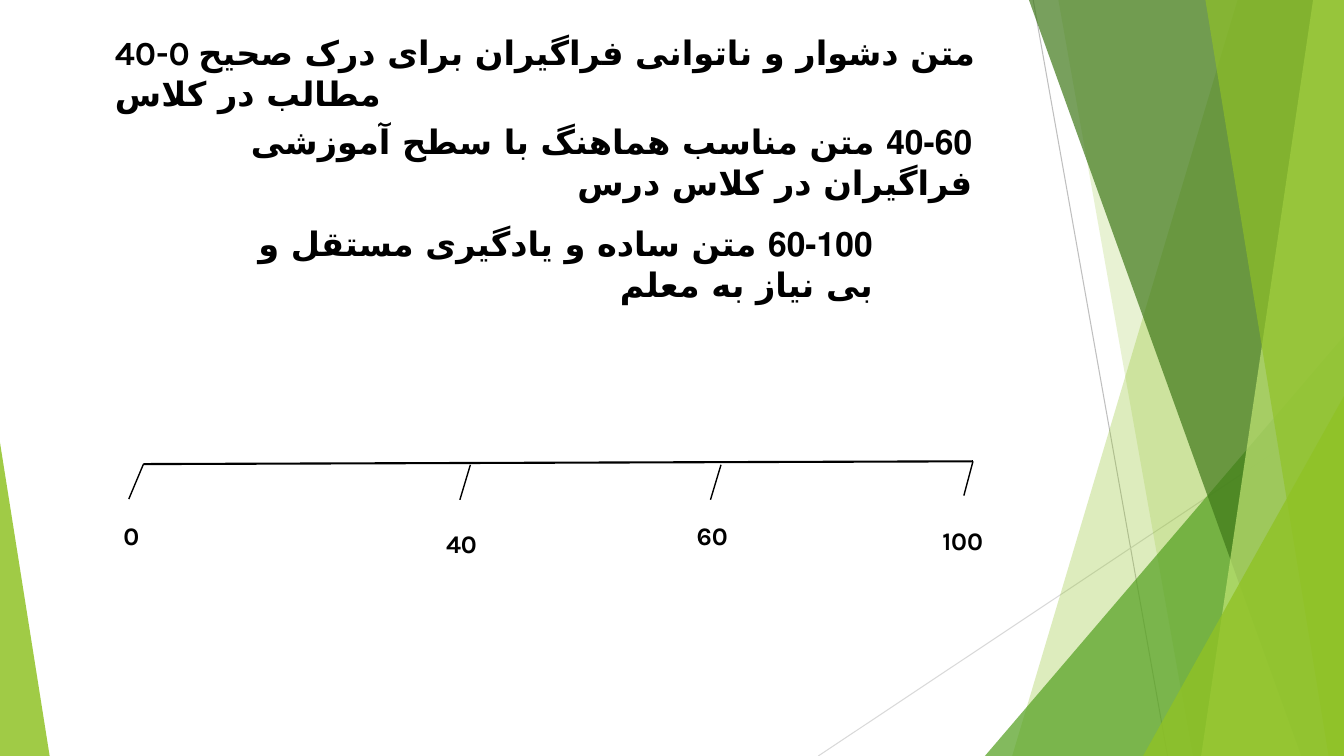
from lxml import etree
from pptx import Presentation
from pptx.dml.color import RGBColor
from pptx.enum.shapes import MSO_CONNECTOR, MSO_SHAPE
from pptx.enum.text import PP_ALIGN
from pptx.oxml.ns import qn
from pptx.util import Pt

STRAIGHT = MSO_CONNECTOR.STRAIGHT
TRIANGLE = MSO_SHAPE.ISOSCELES_TRIANGLE
LEFT, RIGHT = PP_ALIGN.LEFT, PP_ALIGN.RIGHT

BLACK = RGBColor(0x00, 0x00, 0x00)
GREY = RGBColor(0xBF, 0xBF, 0xBF)
PALE_GREY = RGBColor(0xD9, 0xD9, 0xD9)
LIME = RGBColor(0x90, 0xC2, 0x26)
PALE_LIME = RGBColor(0xC0, 0xE4, 0x74)
GREEN = RGBColor(0x54, 0xA0, 0x21)
DARK_GREEN = RGBColor(0x3F, 0x78, 0x19)

WIDTH, HEIGHT = 960, 540
FONT = "Karla"
NUMBER_FONT = "Helvetica"
PERSIAN_FONT = "DejaVu Sans"

# Left, top, width, height, right-to-left, score range, meaning
STATEMENTS = [
    (75, 19.5, 636, 36, False, "40-0",
     " متن دشوار و ناتوانی فراگیران برای درک صحیح مطالب در کلاس"),
    (83.5, 83, 618, 36, True, "40-60",
     " متن مناسب هماهنگ با سطح آموزشی فراگیران در کلاس درس"),
    (165.5, 156, 465, 36, True, "60-100",
     " متن ساده و یادگیری مستقل و بی نیاز به معلم"),
]

# Score, tick x and y, tick lean and drop, label x, y and width; from the axis start
SCORES = [
    ("0", 0, 0, -10.5, 25, -21.5, 36.5, 26),
    ("40", 233.5, 0.5, -7.5, 25, 209, 42, 37.5),
    ("60", 412.5, 0.5, -7.5, 25, 388, 36.5, 37.5),
    ("100", 592.5, -2, -6.5, 24.5, 563.5, 40, 49.5),
]


def add_line(slide, start, end, color, weight):
    line = slide.shapes.add_connector(STRAIGHT, *map(Pt, (*start, *end)))
    line.line.color.rgb = color
    line.line.width = Pt(weight)
    etree.SubElement(line._element.spPr, qn("a:effectLst"))


def paint(shape, color, opacity):
    """Fill without outline or shadow; opacity is in percent."""
    shape.shadow.inherit = False
    shape.line.fill.background()
    shape.fill.solid()
    shape.fill.fore_color.rgb = color
    color_node = shape._element.spPr.find(qn("a:solidFill"))[0]
    etree.SubElement(color_node, qn("a:alpha"), val=str(opacity * 1000))


def add_facet(slide, box, top_x, bottom_x, color, opacity):
    """Panel from a slanted left edge to the right side of the box."""
    left, top, width, height = box
    right, bottom = left + width, top + height
    corners = [(left + top_x, top), (right, top), (right, bottom),
               (left + bottom_x, bottom)]
    (start, *others) = [(Pt(x), Pt(y)) for x, y in corners]
    builder = slide.shapes.build_freeform(*start)
    builder.add_line_segments(others)
    paint(builder.convert_to_shape(), color, opacity)


def add_triangle(slide, left, top, width, height, apex, color, opacity):
    triangle = slide.shapes.add_shape(
        TRIANGLE, *map(Pt, (left, top, width, height)))
    triangle.adjustments[0] = apex
    paint(triangle, color, opacity)


def add_side_facets(slide, box):
    left, top, width, height = box
    right, bottom = left + width, top + height

    def add_corner(corner_width, corner_height, color, opacity):
        add_triangle(slide, right - corner_width, bottom - corner_height,
                     corner_width, corner_height, 1, color, opacity)

    add_line(slide, (left + 34.5, top), (left + 130.5, bottom), GREY, 0.75)
    add_line(slide, (right, top + 290), (left - 119, bottom), PALE_GREY, 0.75)
    add_facet(slide, box, 180.5, 19.5, LIME, 30)
    add_facet(slide, box, 52.5, 148.5, LIME, 20)
    add_corner(256.5, 300, GREEN, 72)
    add_facet(slide, box, 31.5, 226, DARK_GREEN, 70)
    add_facet(slide, box, 234.5, 154.5, PALE_LIME, 70)
    add_facet(slide, box, 157.5, 245.5, LIME, 65)
    add_corner(143.5, 257, LIME, 80)


def add_text(slide, box, number, size, meaning="", rtl=False):
    frame = slide.shapes.add_textbox(*map(Pt, box)).text_frame
    frame.word_wrap = True
    paragraph = frame.paragraphs[0]
    paragraph.alignment = RIGHT if rtl else LEFT
    if rtl:
        paragraph._p.get_or_add_pPr().set("rtl", "1")
    style = {"name": FONT, "size": Pt(size), "bold": True}
    for wording, script_font in ((number, NUMBER_FONT), (meaning, PERSIAN_FONT)):
        if not wording:
            continue
        run = paragraph.add_run()
        run.text = wording
        for key, value in style.items():
            setattr(run.font, key, value)
        run.font.color.rgb = BLACK
        etree.SubElement(run._r.get_or_add_rPr(), qn("a:cs"),
                         typeface=script_font)


def add_score_axis(slide, box):
    left, top, width, rise = box
    add_line(slide, (left, top), (left + width, top - rise), BLACK, 1.5)
    for score, x, y, lean, drop, label_x, label_y, label_width in SCORES:
        tick = (left + x, top + y)
        add_line(slide, tick, (tick[0] + lean, tick[1] + drop), BLACK, 1)
        add_text(slide, (left + label_x, top + label_y, label_width, 29),
                 score, 18)


def main():
    deck = Presentation()
    deck.slide_width, deck.slide_height = Pt(WIDTH), Pt(HEIGHT)
    slide = deck.slides.add_slide(deck.slide_layouts[6])
    add_side_facets(slide, (703.5, 0, 256.5, HEIGHT))
    add_triangle(slide, 0, 316, 35.5, 224, 0, LIME, 85)
    add_score_axis(slide, (102.5, 331.5, 592.5, 2))
    for *box, rtl, score_range, meaning in STATEMENTS:
        add_text(slide, box, score_range, 24, meaning, rtl)
    deck.save("out.pptx")


if __name__ == "__main__":
    main()
